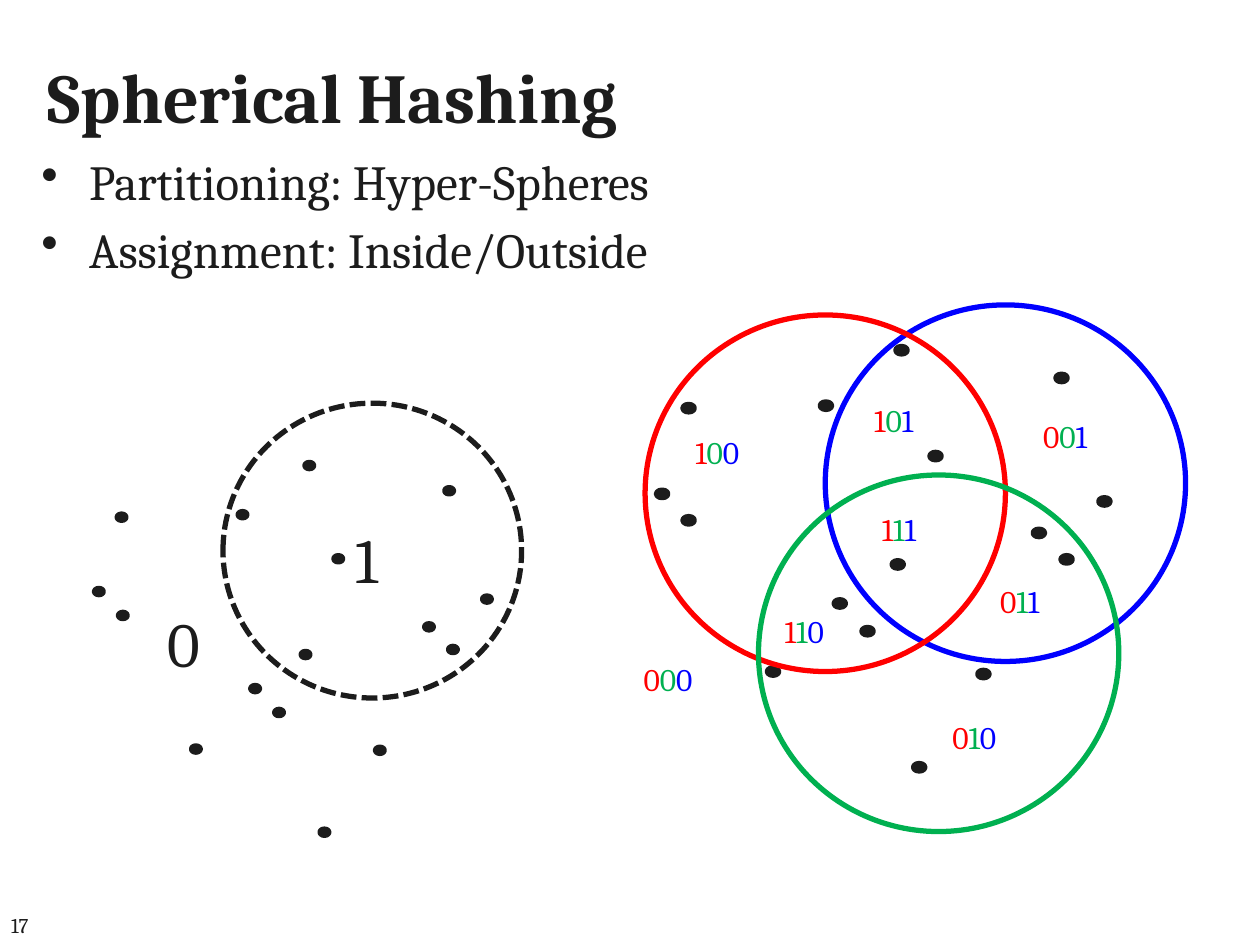
import pptx
import pptx.dml.color
import pptx.enum.dml
import pptx.enum.shapes
import pptx.enum.text
import pptx.util
from lxml import etree
from pptx.oxml.ns import qn

Inches = pptx.util.Inches
Pt = pptx.util.Pt

FONT = "Cambria"
COLORS = {"ink": "1C1C1C", "red": "FF0000", "green": "00B050", "blue": "0000FF"}
BIT_COLORS = ("red", "green", "blue")

# Left and top of each data point
SINGLE_DOTS = [
    (0.93, 4.08), (0.75, 4.67), (0.94, 4.86), (1.89, 4.06),
    (2.42, 3.67), (1.99, 5.44), (3.83, 4.73), (2.54, 6.58),
    (2.98, 5.93), (2.65, 4.41), (3.37, 4.95), (3.56, 5.13),
    (2.18, 5.63), (2.39, 5.17), (3.53, 3.87), (1.52, 5.92),
]
TRIPLE_DOTS = [
    (5.42, 3.21), (5.21, 3.89), (5.42, 4.1), (6.51, 3.19),
    (7.11, 2.75), (6.62, 4.76), (8.72, 3.95), (7.25, 6.06),
    (7.76, 5.32), (7.38, 3.59), (8.2, 4.2), (8.42, 4.41),
    (6.84, 4.98), (7.08, 4.45), (8.38, 2.97), (6.09, 5.3),
]
SPHERES = [("blue", 6.55, 2.42), ("red", 5.12, 2.5), ("green", 6.02, 3.77)]
CODES = [
    ("111", 6.9, 4), ("011", 7.84, 4.57), ("010", 7.46, 5.65),
    ("110", 6.13, 4.81), ("000", 5.01, 5.19), ("100", 5.42, 3.39),
    ("001", 8.18, 3.26), ("101", 6.84, 3.13),
]


def rgb(name):
    return pptx.dml.color.RGBColor.from_string(COLORS[name])


def style_font(font, size, color="ink", bold=False):
    font.name = FONT
    font.size = Pt(size)
    font.bold = bold
    font.color.rgb = rgb(color)


def add_text(shapes, text, box, size, anchor=pptx.enum.text.MSO_ANCHOR.TOP):
    tf = shapes.add_textbox(*map(Inches, box)).text_frame
    tf.word_wrap = True
    tf.vertical_anchor = anchor
    tf.text = text
    for p in tf.paragraphs:
        style_font(p.font, size)
    return tf


def add_code(shapes, code, left, top):
    """Add a three-bit code with one colour per sphere."""
    tf = add_text(shapes, "", (left, top, 1.07, 0.46), 18)
    for bit, color in zip(code, BIT_COLORS):
        r = tf.paragraphs[0].add_run()
        r.text = bit
        style_font(r.font, 18, color)


def add_ellipse(shapes, left, top, width, height, color="ink", filled=False):
    sp = shapes.add_shape(pptx.enum.shapes.MSO_SHAPE.OVAL,
                          *map(Inches, (left, top, width, height)))
    sp.shadow.inherit = False
    if filled:
        sp.fill.solid()
        sp.fill.fore_color.rgb = rgb(color)
    else:
        sp.fill.background()
    sp.line.color.rgb = rgb(color)
    sp.line.width = Pt(3)
    return sp


def add_dots(shapes, points, width, height):
    for left, top in points:
        add_ellipse(shapes, left, top, width, height, filled=True)


def add_title(s, text):
    title = s.shapes.title
    title.left, title.top = Inches(0.28), Inches(0.13)
    title.width, title.height = Inches(9.61), Inches(1.25)
    tf = title.text_frame
    tf.text = text
    tf.vertical_anchor = pptx.enum.text.MSO_ANCHOR.MIDDLE
    p = tf.paragraphs[0]
    p.alignment = pptx.enum.text.PP_ALIGN.LEFT
    style_font(p.font, 40, bold=True)


def add_bullets(s, lines):
    tf = add_text(s.shapes, "\n".join(lines), (0.23, 1.15, 9.72, 6.22), 28)
    for p in tf.paragraphs:
        p.space_before = Pt(5.6)
        pPr = p._p.get_or_add_pPr()
        pPr.set("marL", str(Inches(0.38)))
        pPr.set("indent", str(-Inches(0.38)))
        bullet = etree.Element(qn("a:buChar"), char="•")
        pPr.find(qn("a:defRPr")).addprevious(bullet)


def add_single_sphere(s):
    shapes = s.shapes.add_group_shape().shapes
    add_dots(shapes, SINGLE_DOTS, 0.07, 0.05)
    sp = add_ellipse(shapes, 1.77, 3.2, 2.37, 2.34)
    sp.line.dash_style = pptx.enum.dml.MSO_LINE.SQUARE_DOT
    for text, left, top in (("0", 1.23, 4.75), ("1", 2.72, 4.08)):
        add_text(shapes, text, (left, top, 0.46, 0.56), 36)


def add_three_spheres(s):
    shapes = s.shapes.add_group_shape().shapes
    add_dots(shapes, TRIPLE_DOTS, 0.09, 0.06)
    for color, left, top in SPHERES:
        add_ellipse(shapes, left, top, 2.86, 2.83, color)
    for code in CODES:
        add_code(shapes, *code)


def main():
    prs = pptx.Presentation()
    prs.slide_width, prs.slide_height = Inches(10), Inches(7.5)
    s = prs.slides.add_slide(prs.slide_layouts[5])
    add_title(s, "Spherical Hashing")
    add_text(s.shapes, "17", (-0.01, 7.14, 2.33, 0.4), 12,
             pptx.enum.text.MSO_ANCHOR.MIDDLE)
    add_single_sphere(s)
    add_three_spheres(s)
    add_bullets(s, ["Partitioning: Hyper-Spheres", "Assignment: Inside/Outside"])
    prs.save("out.pptx")


if __name__ == "__main__":
    main()
